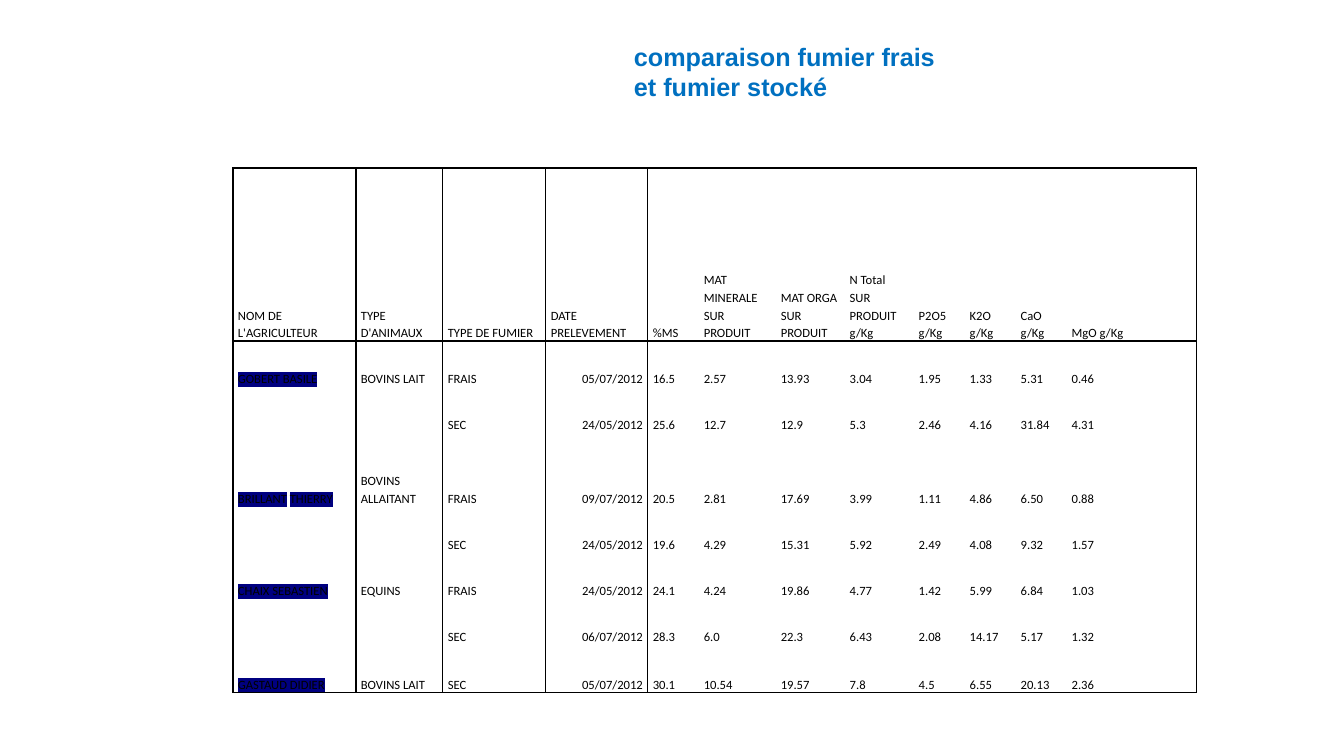
"""Build the slide comparing fresh and stored manure analyses."""
from lxml import etree
from pptx import Presentation
from pptx import util as u
from pptx.dml.color import RGBColor
from pptx.enum import text
from pptx.oxml import ns

TITLE = "comparaison fumier frais et fumier stocké"
HEADER = ["NOM DE L'AGRICULTEUR", "TYPE D'ANIMAUX", "TYPE DE FUMIER", "DATE PRELEVEMENT",
          "%MS", "MAT MINERALE SUR PRODUIT", "MAT ORGA SUR PRODUIT",
          "N Total SUR PRODUIT g/Kg", "P2O5 g/Kg", "K2O g/Kg", "CaO g/Kg", "MgO g/Kg"]
SAMPLES = [
    [["GOBERT BASILE"], "BOVINS LAIT", "FRAIS", "05/07/2012",
     "16.5", "2.57", "13.93", "3.04", "1.95", "1.33", "5.31", "0.46"],
    ["", "", "SEC", "24/05/2012",
     "25.6", "12.7", "12.9", "5.3", "2.46", "4.16", "31.84", "4.31"],
    [["BRILLANT", " ", "THIERRY"], "BOVINS ALLAITANT", "FRAIS", "09/07/2012",
     "20.5", "2.81", "17.69", "3.99", "1.11", "4.86", "6.50", "0.88"],
    ["", "", "SEC", "24/05/2012",
     "19.6", "4.29", "15.31", "5.92", "2.49", "4.08", "9.32", "1.57"],
    [["CHAIX SEBASTIEN"], "EQUINS", "FRAIS", "24/05/2012",
     "24.1", "4.24", "19.86", "4.77", "1.42", "5.99", "6.84", "1.03"],
    ["", "", "SEC", "06/07/2012",
     "28.3", "6.0", "22.3", "6.43", "2.08", "14.17", "5.17", "1.32"],
    [["GASTAUD DIDIER"], "BOVINS LAIT", "SEC", "05/07/2012",
     "30.1", "10.54", "19.57", "7.8", "4.5", "6.55", "20.13", "2.36"],
]
COL_WIDTHS = [49, 74, 69, 18, 83, 20, 102, 51, 77, 69, 69, 51, 51, 51, 130]
ROW_HEIGHTS = [173, 46, 46, 74, 46, 46, 46, 48]
FIELD_COLS = [0, 2, 4] + list(range(6, 15))
DATE_COL = 6
MERGED = {(0, 0), (0, 2), (0, 4), (1, 0), (1, 2), (3, 0), (3, 2), (5, 0), (7, 0), (7, 2)}
RULED_X = {0, 2, 4, 6, 7, 15}
RULED_Y = {0, 1, 8}

BLACK = RGBColor(0x00, 0x00, 0x00)
BLUE = RGBColor(0x00, 0x70, 0xC0)
NAVY = RGBColor(0x00, 0x00, 0x80)
WHITE = RGBColor(0xFF, 0xFF, 0xFF)


def px(n):
    return u.Emu(round(n * 914400 / 100.8))


def add_color(parent, color):
    etree.SubElement(parent, ns.qn("a:srgbClr"), val=str(color))


def add_run(p, words, font, size, color, highlight=None):
    r = p.add_run()
    r.text = words
    r.font.size = u.Pt(size)
    r.font.color.rgb = color
    r.font.name = font
    if highlight is not None:
        mark = etree.Element(ns.qn("a:highlight"))
        add_color(mark, highlight)
        r._r.get_or_add_rPr().insert(1, mark)
    return r


def set_borders(cell, ruled):
    tc_pr = cell._tc.get_or_add_tcPr()
    for i, (side, on) in enumerate(zip("LRTB", ruled)):
        ln = etree.Element(ns.qn(f"a:ln{side}"), w=str(u.Pt(1)))
        if on:
            add_color(etree.SubElement(ln, ns.qn("a:solidFill")), BLACK)
        else:
            etree.SubElement(ln, ns.qn("a:noFill"))
        tc_pr.insert(i, ln)


def fill_cell(cell, value, align):
    p = cell.text_frame.paragraphs[0]
    p.line_spacing = 1.15
    p.alignment = align
    p.font.size = u.Pt(9)
    is_name = isinstance(value, list)
    for part in value if is_name else [value]:
        if part:
            add_run(p, part, "Calibri", 9, BLACK, NAVY if is_name and part.strip() else None)


def add_title(s):
    sp = s.shapes.add_textbox(px(624), px(36), px(326), px(72))
    tf = sp.text_frame
    tf.word_wrap = True
    tf.auto_size = text.MSO_AUTO_SIZE.SHAPE_TO_FIT_TEXT
    add_run(tf.paragraphs[0], TITLE, "Arial", 18, BLUE).font.bold = True


def add_analyses(s):
    frame = s.shapes.add_table(len(ROW_HEIGHTS), len(COL_WIDTHS), px(233), px(168),
                               px(sum(COL_WIDTHS)), px(sum(ROW_HEIGHTS)))
    table = frame.table
    table.first_row = table.horz_banding = False
    for col, width in zip(table.columns, COL_WIDTHS):
        col.width = px(width)
    for row, height in zip(table.rows, ROW_HEIGHTS):
        row.height = px(height)
    for y, values in enumerate([HEADER] + SAMPLES):
        fields = dict(zip(FIELD_COLS, values))
        for x in range(len(COL_WIDTHS)):
            cell = table.cell(y, x)
            cell.margin_left = cell.margin_right = px(5)
            cell.margin_top = cell.margin_bottom = 0
            cell.vertical_anchor = text.MSO_ANCHOR.BOTTOM
            cell.fill.solid()
            cell.fill.fore_color.rgb = WHITE
            span = 2 if (y, x) in MERGED else 1
            set_borders(cell, (x in RULED_X, x + span in RULED_X, y in RULED_Y, y + 1 in RULED_Y))
            right = y > 0 and x == DATE_COL
            fill_cell(cell, fields.get(x, ""), text.PP_ALIGN.RIGHT if right else text.PP_ALIGN.LEFT)
    for y, x in MERGED:
        table.cell(y, x).merge(table.cell(y, x + 1))


def main():
    prs = Presentation()
    prs.slide_width, prs.slide_height = px(1344), px(756)
    s = prs.slides.add_slide(prs.slide_layouts[6])
    add_title(s)
    add_analyses(s)
    prs.save("out.pptx")


if __name__ == "__main__":
    main()
